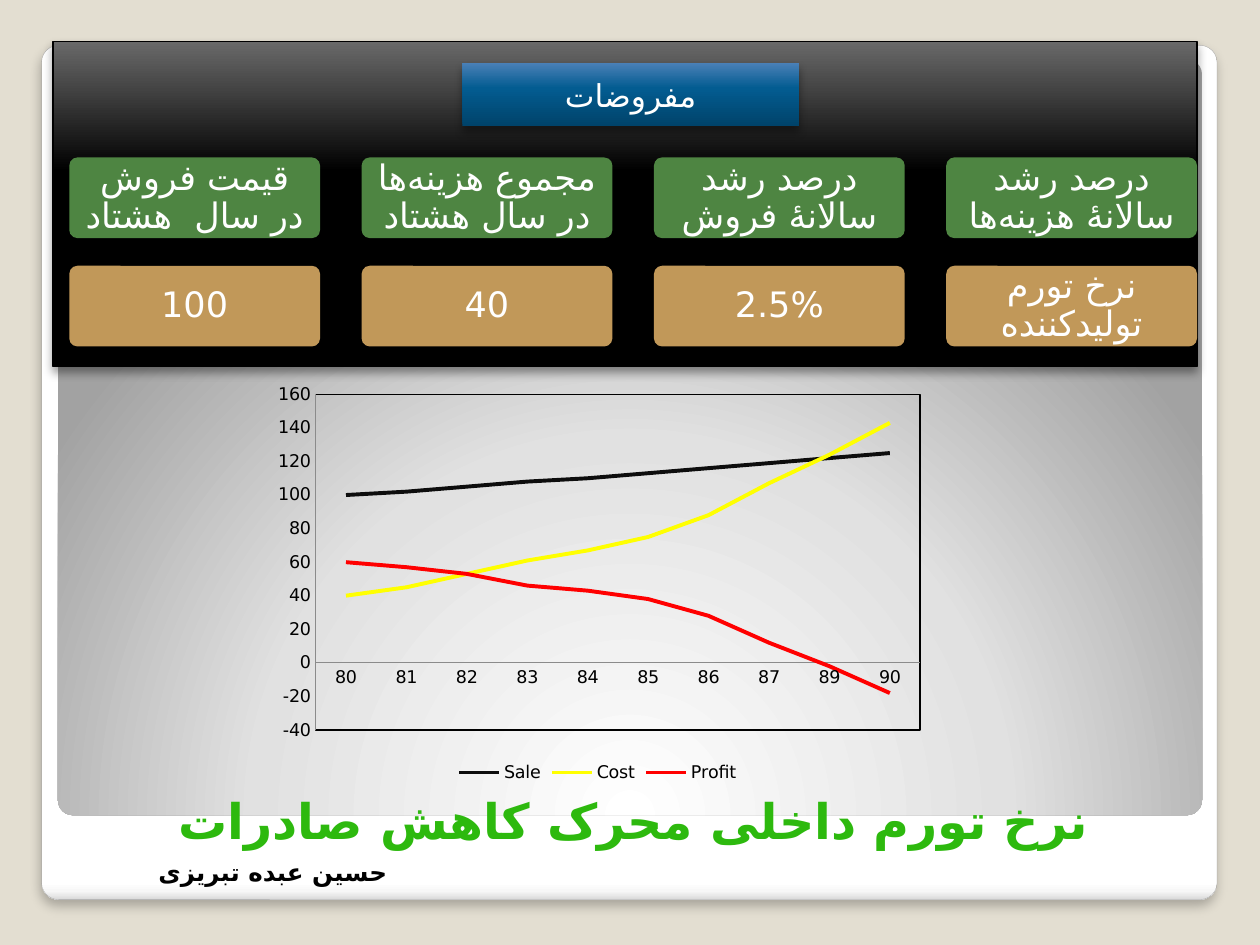
from lxml.etree import SubElement
from pptx import Presentation
from pptx.chart.data import CategoryChartData
from pptx.dml.color import RGBColor
from pptx.enum.chart import XL_CHART_TYPE, XL_LEGEND_POSITION, XL_TICK_MARK
from pptx.enum.shapes import MSO_SHAPE
from pptx.enum.text import MSO_ANCHOR, PP_ALIGN
from pptx.oxml import parse_xml
from pptx.oxml.ns import nsdecls, qn
from pptx.util import Inches, Pt

# Content
HALF_SPACE = chr(0x200C)  # Persian zero-width non-joiner
COSTS = f"هزینه{HALF_SPACE}ها"
TITLE = "نرخ تورم داخلی محرک کاهش صادرات"
AUTHOR = "حسین عبده تبریزی"
HEADING = "مفروضات"
ASSUMPTIONS = [
    ("قیمت فروش در سال  هشتاد", "100"),
    (f"مجموع {COSTS} در سال هشتاد", "40"),
    ("درصد رشد سالانۀ فروش", "2.5%"),
    (f"درصد رشد سالانۀ {COSTS}", "نرخ تورم تولیدکننده"),
]
YEARS = ["80", "81", "82", "83", "84", "85", "86", "87", "89", "90"]
SERIES = {
    "Sale": [100, 102, 105, 108, 110, 113, 116, 119, 122, 125],
    "Cost": [40, 45, 53, 61, 67, 75, 88, 107, 124, 143],
    "Profit": [60, 57, 53, 46, 43, 38, 28, 12, -2, -18],
}

# Style
FONT = "DejaVu Sans"
COLORS = {
    "background": "E3DED1", "frame": "A4A4A4", "black": "000000", "white": "FFFFFF",
    "label": "4E8542", "value": "C19859", "title": "2DB90E", "axis": "8B8B8B",
    "Sale": "0D0D0D", "Cost": "FFFF00", "Profit": "FF0000",
}
LINEAR = '<a:lin ang="{}" scaled="0"/>'
DOWN, UP = LINEAR.format(90 * 60000), LINEAR.format(270 * 60000)
GLOW_FROM_BELOW = ('<a:path path="circle"><a:fillToRect l="50000" t="175000" '
                   'r="50000" b="-75000"/></a:path>')
GRADIENTS = {
    "card": ([(0, "FFFFFF"), (98, "FFFFFF"), (99, "F7F7F7"), (100, "DADADA")], DOWN),
    "panel": ([(0, "FFFFFF"), (55, "E1E1E1"), (100, "A2A2A2")], GLOW_FROM_BELOW),
    "band": ([(0, "000000"), (60, "000000"), (100, "696969")], UP),
    "heading": ([(0, "00436A"), (60, "035C91"), (100, "4A80B7")], UP),
}

# Grid of assumption boxes, in inches
GRID_LEFT, GRID_TOP = 0.55, 1.25
BOX_WIDTH, BOX_HEIGHT = 1.99, 0.64
COLUMN_STEP, ROW_STEP = 2.32, 0.86


def color(name):
    return RGBColor.from_string(COLORS[name])


def inches(*lengths):
    return [Inches(length) for length in lengths]


def add_box(slide, kind, place, fill=None, gradient=None, line=None, corner=None):
    shape = slide.shapes.add_shape(kind, *inches(*place))
    shape.shadow.inherit = False
    if corner is not None:
        shape.adjustments[0] = corner
    if gradient:
        stops, direction = GRADIENTS[gradient]
        stop_xml = "".join(f'<a:gs pos="{position * 1000}"><a:srgbClr val="{value}"/></a:gs>'
                           for position, value in stops)
        shape._element.spPr.insert(2, parse_xml(
            f'<a:gradFill {nsdecls("a")} rotWithShape="1"><a:gsLst>{stop_xml}</a:gsLst>'
            f'{direction}</a:gradFill>'))
    else:
        shape.fill.solid()
        shape.fill.fore_color.rgb = color(fill)
    if line:
        name, width = line
        shape.line.color.rgb = color(name)
        shape.line.width = Pt(width)
    else:
        shape.line.fill.background()
    return shape


def add_shadow(shape, opacity, blur, distance):
    effects = shape._element.spPr.find(qn("a:effectLst"))
    effects.append(parse_xml(
        f'<a:outerShdw {nsdecls("a")} blurRad="{Pt(blur)}" dist="{Pt(distance)}" '
        f'dir="5400000" rotWithShape="0"><a:srgbClr val="{COLORS["black"]}">'
        f'<a:alpha val="{opacity * 1000}"/></a:srgbClr></a:outerShdw>'))


def write(shape, text, size, name="white", bold=False, spacing=None):
    frame = shape.text_frame
    frame.word_wrap = True
    frame.vertical_anchor = MSO_ANCHOR.MIDDLE
    paragraph = frame.paragraphs[0]
    paragraph.text = text
    paragraph.alignment = PP_ALIGN.CENTER
    paragraph.line_spacing = spacing
    font = paragraph.font
    font.name, font.size, font.bold = FONT, Pt(size), bold
    font.color.rgb = color(name)
    # Right-to-left direction and the font for Persian script
    properties = paragraph._p.pPr
    properties.set("rtl", "1")
    SubElement(properties.find(qn("a:defRPr")), qn("a:cs")).set("typeface", FONT)


def add_trend_chart(slide):
    data = CategoryChartData()
    data.categories = YEARS
    for name, values in SERIES.items():
        data.add_series(name, values)
    chart = slide.shapes.add_chart(
        XL_CHART_TYPE.LINE, *inches(2.08, 3, 5.33, 3.25), data).chart
    chart.has_title = False
    chart.font.name, chart.font.size = FONT, Pt(10)
    chart.font.color.rgb = color("black")
    chart.has_legend = True
    chart.legend.position = XL_LEGEND_POSITION.BOTTOM
    chart.legend.include_in_layout = False

    chart.value_axis.minimum_scale = -40
    chart.value_axis.maximum_scale = 160
    chart.value_axis.major_unit = 20
    chart.value_axis.has_major_gridlines = False
    for axis in (chart.category_axis, chart.value_axis):
        axis.major_tick_mark = axis.minor_tick_mark = XL_TICK_MARK.NONE
        axis.format.line.color.rgb = color("axis")
        axis.format.line.width = Pt(0.75)

    chart.plots[0].vary_by_categories = False
    for series in chart.plots[0].series:
        series.smooth = False
        series.format.line.color.rgb = color(series.name)
        series.format.line.width = Pt(2.25)

    # Framed plot area at a fixed share of the chart
    plot_area = chart._chartSpace.chart.plotArea
    for layout in plot_area.findall(qn("c:layout")):
        plot_area.remove(layout)
    shares = "".join(f'<c:{key} val="{value}"/>' for key, value in
                     (("x", 0.08), ("y", 0.04), ("w", 0.9), ("h", 0.82)))
    plot_area.insert(0, parse_xml(
        f'<c:layout {nsdecls("c")}><c:manualLayout><c:layoutTarget val="inner"/>'
        f'<c:xMode val="edge"/><c:yMode val="edge"/>{shares}</c:manualLayout></c:layout>'))
    plot_area.append(parse_xml(
        f'<c:spPr {nsdecls("c", "a")}><a:noFill/><a:ln w="{Pt(0.75)}"><a:solidFill>'
        f'<a:srgbClr val="{COLORS["black"]}"/></a:solidFill></a:ln></c:spPr>'))


def main():
    presentation = Presentation()
    presentation.slide_width, presentation.slide_height = inches(10, 7.5)
    slide = presentation.slides.add_slide(presentation.slide_layouts[6])
    slide.background.fill.solid()
    slide.background.fill.fore_color.rgb = color("background")

    # Card, grey panel and black band
    card = add_box(slide, MSO_SHAPE.ROUNDED_RECTANGLE, (0.33, 0.36, 9.33, 6.78),
                   gradient="card", line=("frame", 0.16), corner=0.02)
    add_shadow(card, 25, 6, 4)
    add_box(slide, MSO_SHAPE.ROUNDED_RECTANGLE, (0.46, 0.47, 9.08, 6),
            gradient="panel", corner=0.02)
    band = add_box(slide, MSO_SHAPE.RECTANGLE, (0.42, 0.33, 9.08, 2.58),
                   gradient="band", line=("black", 0.75))
    add_shadow(band, 40, 5.2, 3)

    # Author and title
    author = slide.shapes.add_textbox(*inches(0.58, 6.75, 3.17, 0.34))
    write(author, AUTHOR, 14, "black", bold=True)
    title = slide.shapes.add_textbox(*inches(0.55, 5.93, 8.95, 1.15))
    write(title, TITLE, 28, "title", bold=True)

    # Assumptions: labels above values
    for column, pair in enumerate(ASSUMPTIONS):
        for row, (text, fill) in enumerate(zip(pair, ("label", "value"))):
            place = (GRID_LEFT + column * COLUMN_STEP, GRID_TOP + row * ROW_STEP,
                     BOX_WIDTH, BOX_HEIGHT)
            box = add_box(slide, MSO_SHAPE.ROUNDED_RECTANGLE, place, fill=fill, corner=0.1)
            write(box, text, 20, spacing=0.9)

    add_trend_chart(slide)

    # Heading
    heading = add_box(slide, MSO_SHAPE.RECTANGLE, (3.67, 0.5, 2.67, 0.5), gradient="heading")
    add_shadow(heading, 40, 5.2, 3)
    write(heading, HEADING, 18)

    presentation.save("out.pptx")


if __name__ == "__main__":
    main()
